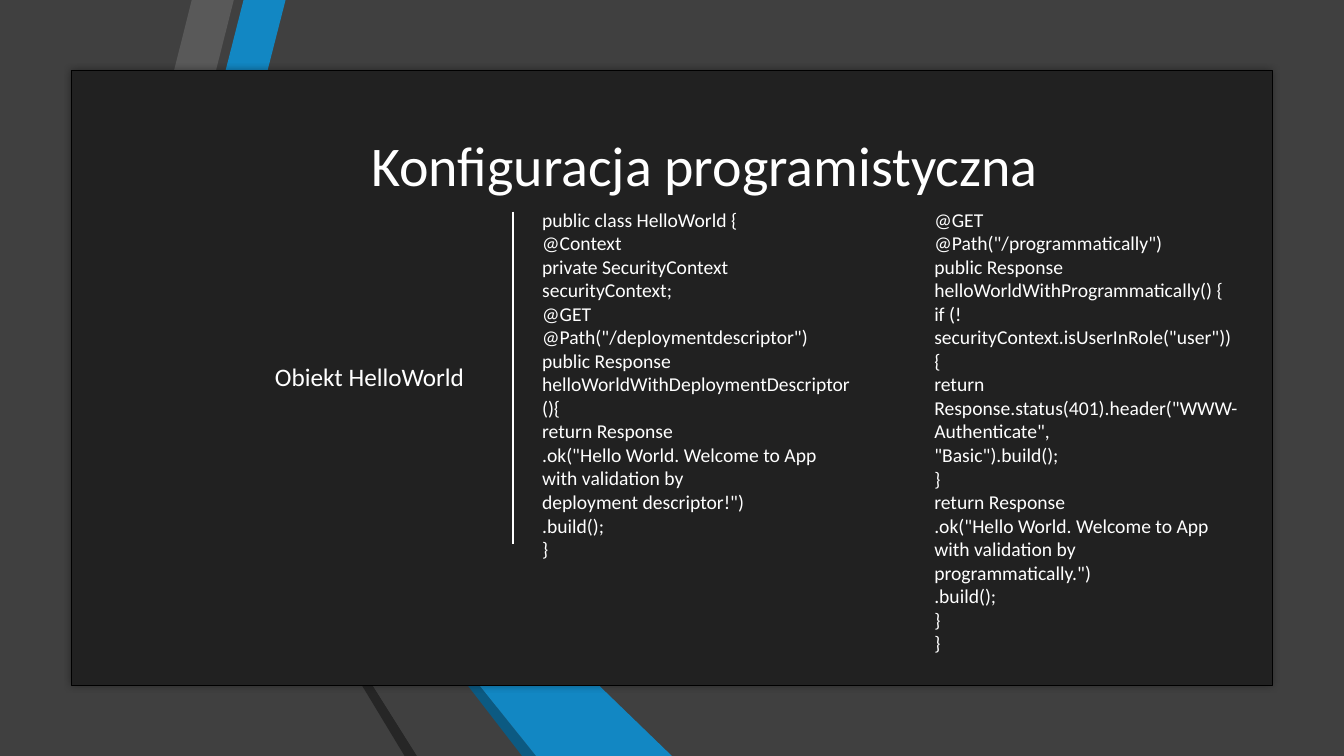
from dataclasses import dataclass

from lxml import etree
from pptx import Presentation
from pptx import util as u
from pptx.dml.color import RGBColor
from pptx.enum import shapes, text
from pptx.oxml import ns

WIDTH, HEIGHT = 960, 540
FONT = "Calibri"
WHITE, BLACK = "FFFFFF", "000000"
PANEL_FILL, BACKDROP = "212121", "404040"
BLUE, DEEP_BLUE = "1287C3", "0C5A82"

FIELD_CODE = """public class HelloWorld {
@Context
private SecurityContext securityContext;
@GET
@Path("/deploymentdescriptor")
public Response helloWorldWithDeploymentDescriptor(){
return Response
.ok("Hello World. Welcome to App with validation by
deployment descriptor!")
.build();
}"""

METHOD_CODE = """@GET
@Path("/programmatically")
public Response helloWorldWithProgrammatically() {
if (!securityContext.isUserInRole("user")) {
return Response.status(401).header("WWW-Authenticate",
"Basic").build();
}
return Response
.ok("Hello World. Welcome to App with validation by
programmatically.")
.build();
}
}"""


@dataclass
class Band:
    color: str
    points: list[tuple[float, float]]


@dataclass
class Label:
    content: str
    left: float
    top: float
    width: float
    height: float
    size: float
    align: text.PP_ALIGN = text.PP_ALIGN.LEFT
    anchor: text.MSO_ANCHOR = text.MSO_ANCHOR.TOP
    fit: text.MSO_AUTO_SIZE = text.MSO_AUTO_SIZE.SHAPE_TO_FIT_TEXT


BANDS = [
    Band(BLUE, [(120.24, 211.68), (148.32, 218.88), (203.76, 0), (173.52, 0)]),
    Band("595959", [(113.76, 210.24), (167.04, 0), (136.8, 0), (85.68, 203.04)]),
    Band("262626", [(85.68, 203.76), (288.72, HEIGHT), (298.08, HEIGHT)]),
    Band(DEEP_BLUE, [(383.04, HEIGHT), (120.24, 212.4), (372.96, HEIGHT)]),
    Band(BLUE, [(120.24, 211.68), (383.04, HEIGHT), (480.24, HEIGHT), (148.32, 218.88)]),
    Band(BACKDROP, [(367.92, HEIGHT), (118.8, 217.44), (113.76, 210.24),
                    (85.68, 203.04), (298.08, HEIGHT)]),
]

LABELS = [
    Label("Konfiguracja programistyczna", 108.72, 6.48, 789.12, 138.24, 40,
          text.PP_ALIGN.CENTER, text.MSO_ANCHOR.BOTTOM, text.MSO_AUTO_SIZE.NONE),
    Label(FIELD_CODE, 380.16, 144.72, 235.44, 262.08, 14),
    Label("Obiekt HelloWorld", 189.36, 254.88, 216, 28.8, 18),
    Label(METHOD_CODE, 660.24, 144.72, 231.84, 329.76, 14),
]


def rgb(value: str) -> RGBColor:
    return RGBColor.from_string(value)


def paint(sp, color: str) -> None:
    sp.shadow.inherit = False
    sp.fill.solid()
    sp.fill.fore_color.rgb = rgb(color)
    sp.line.fill.background()


def add_rect(s, left: float, top: float, width: float, height: float, color: str):
    sp = s.shapes.add_shape(shapes.MSO_SHAPE.RECTANGLE, u.Pt(left), u.Pt(top),
                            u.Pt(width), u.Pt(height))
    paint(sp, color)
    return sp


def add_band(s, band: Band) -> None:
    builder = s.shapes.build_freeform(*band.points[0], scale=u.Pt(1))
    builder.add_line_segments(band.points[1:], close=True)
    paint(builder.convert_to_shape(), band.color)


def add_panel(s) -> None:
    sp = add_rect(s, 51.12, 50.4, 857.52, 439.2, PANEL_FILL)
    sp.line.color.rgb = rgb(BLACK)
    sp.line.width = u.Pt(0.25)
    effects = sp._element.spPr.find(ns.qn("a:effectLst"))
    shadow = etree.SubElement(effects, ns.qn("a:outerShdw"), blurRad=str(u.Pt(5)))
    color = etree.SubElement(shadow, ns.qn("a:srgbClr"), val=BLACK)
    etree.SubElement(color, ns.qn("a:alpha"), val="40000")


def add_divider(s) -> None:
    line = s.shapes.add_connector(shapes.MSO_CONNECTOR.STRAIGHT, u.Pt(366.48),
                                  u.Pt(151.2), u.Pt(366.48), u.Pt(388.8))
    line.line.color.rgb = rgb(WHITE)
    line.line.width = u.Pt(1.25)
    etree.SubElement(line._element.spPr, ns.qn("a:effectLst"))


def add_label(s, label: Label) -> None:
    sp = s.shapes.add_textbox(u.Pt(label.left), u.Pt(label.top),
                              u.Pt(label.width), u.Pt(label.height))
    tf = sp.text_frame
    tf.word_wrap = True
    tf.auto_size = label.fit
    tf.vertical_anchor = label.anchor
    tf.text = label.content
    for p in tf.paragraphs:
        p.alignment = label.align
        for r in p.runs:
            r.font.name = FONT
            r.font.size = u.Pt(label.size)
            r.font.color.rgb = rgb(WHITE)


def main() -> None:
    prs = Presentation()
    prs.slide_width, prs.slide_height = u.Pt(WIDTH), u.Pt(HEIGHT)
    s = prs.slides.add_slide(prs.slide_layouts[6])
    s.background.fill.solid()
    s.background.fill.fore_color.rgb = rgb(PANEL_FILL)
    add_rect(s, 0, 0, WIDTH, HEIGHT, BACKDROP)
    for band in BANDS:
        add_band(s, band)
    add_panel(s)
    add_divider(s)
    for label in LABELS:
        add_label(s, label)
    prs.save("out.pptx")


if __name__ == "__main__":
    main()
